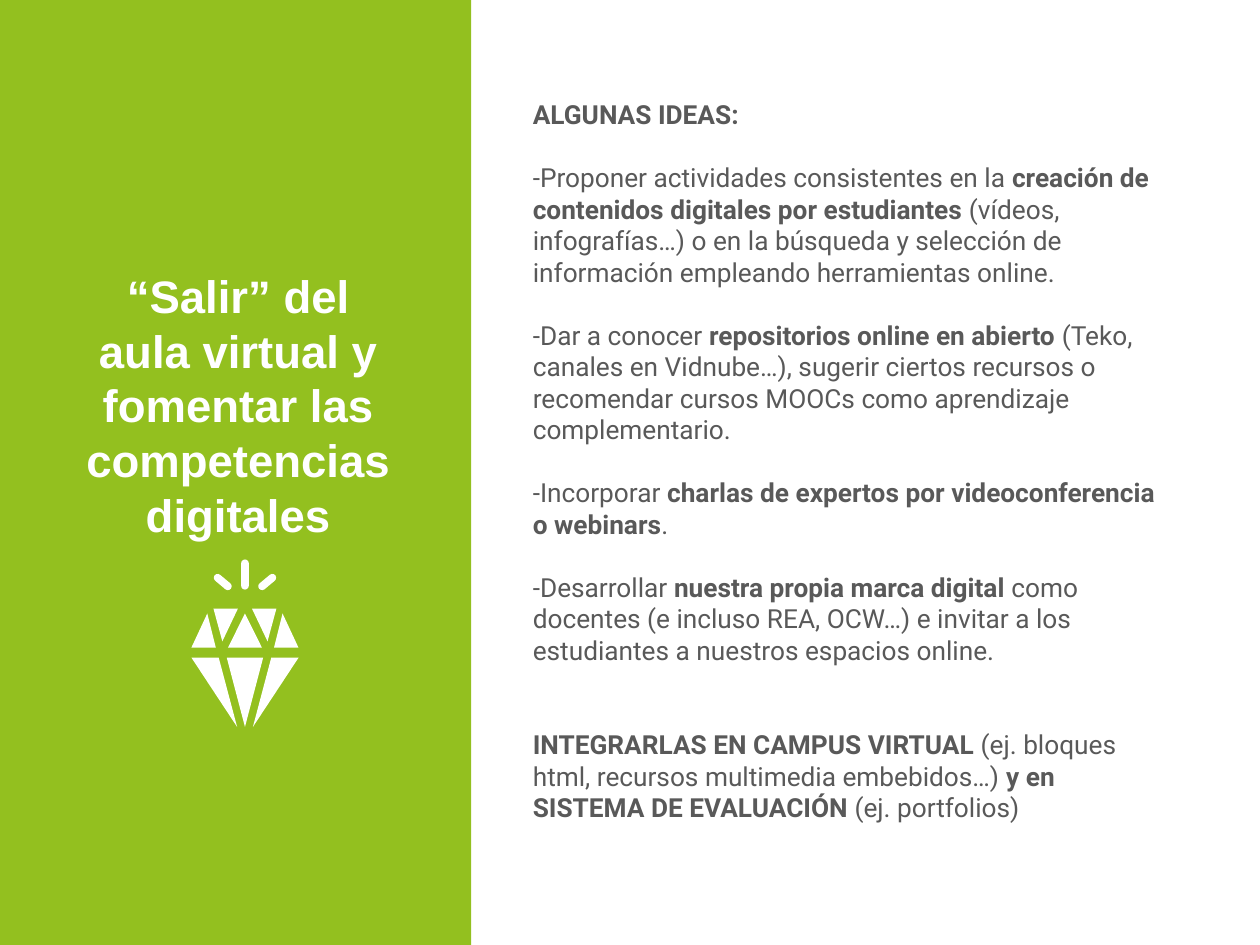
from dataclasses import dataclass

from pptx import Presentation
from pptx.dml.color import RGBColor
from pptx.enum.shapes import MSO_SHAPE as Shape
from pptx.enum.text import MSO_ANCHOR as Anchor, PP_ALIGN as Align
from pptx.util import Pt


@dataclass(frozen=True)
class Theme:
    green: RGBColor = RGBColor(0x93, 0xC0, 0x1F)
    white: RGBColor = RGBColor(0xFF, 0xFF, 0xFF)
    grey: RGBColor = RGBColor(0x59, 0x59, 0x59)
    title_font: str = "Arial"
    body_font: str = "Roboto"
    title_size: int = 26
    body_size: int = 15
    body_line: int = 18


THEME = Theme()

TITLE = "“Salir” del aula virtual y fomentar las competencias digitales"

# Each paragraph: blank lines before it, then (text, bold) runs.
IDEAS = [
    (0, [("ALGUNAS IDEAS:", True)]),
    (1, [("-Proponer actividades consistentes en la ", False),
         ("creación de contenidos digitales por estudiantes", True),
         (" (vídeos, infografías…) o en la búsqueda y selección de "
          "información empleando herramientas online.", False)]),
    (1, [("-Dar a conocer ", False),
         ("repositorios online en abierto ", True),
         ("(Teko, canales en Vidnube…), sugerir ciertos recursos o "
          "recomendar cursos MOOCs como aprendizaje complementario.", False)]),
    (1, [("-Incorporar ", False),
         ("charlas de expertos por videoconferencia o webinars", True),
         (".", False)]),
    (1, [("-Desarrollar ", False),
         ("nuestra propia marca digital", True),
         (" como docentes (e incluso REA, OCW…) e invitar a los "
          "estudiantes a nuestros espacios online.", False)]),
    (2, [("INTEGRARLAS EN CAMPUS VIRTUAL ", True),
         ("(ej. bloques html, recursos multimedia embebidos…) ", False),
         ("y en SISTEMA DE EVALUACIÓN ", True),
         ("(ej. portfolios)", False)]),
]

GEM_AXIS = 140
CROWN_TOP, CROWN_PEAK, CROWN_TIP, CROWN_BASE = 347.8, 350.6, 366.5, 370.1
GIRDLE, POINT = 375.8, 415.4

# Facets as offsets from the axis of the gem.
CENTRE_FACETS = [
    [(0, CROWN_PEAK), (-9.7, CROWN_BASE), (9.7, CROWN_BASE)],
    [(-10.4, GIRDLE), (0, POINT), (10.4, GIRDLE)],
]
SIDE_FACETS = [
    [(4, CROWN_TOP), (12.9, CROWN_TIP), (18, CROWN_TOP)],
    [(21.5, CROWN_PEAK), (16.6, CROWN_BASE), (30.6, CROWN_BASE)],
    [(15, GIRDLE), (4.5, POINT), (30.6, GIRDLE)],
]


def paint(shape, color):
    shape.shadow.inherit = False
    shape.fill.solid()
    shape.fill.fore_color.rgb = color
    shape.line.fill.background()


def add_text_frame(slide, left, top, width, height, margin_y):
    frame = slide.shapes.add_textbox(
        Pt(left), Pt(top), Pt(width), Pt(height)).text_frame
    frame.word_wrap = True
    frame.vertical_anchor = Anchor.TOP
    frame.margin_left = frame.margin_right = Pt(7.2)
    frame.margin_top = frame.margin_bottom = Pt(margin_y)
    return frame


def set_font(paragraph, name, size, color):
    font = paragraph.font
    font.name, font.size, font.color.rgb = name, Pt(size), color


def add_title(slide):
    frame = add_text_frame(slide, 41.8, 149.8, 188.6, 164.9, 3.6)
    title = frame.paragraphs[0]
    title.text = TITLE
    title.alignment = Align.CENTER
    set_font(title, THEME.title_font, THEME.title_size, THEME.white)
    title.font.bold = True


def add_ideas(slide):
    frame = add_text_frame(slide, 297.4, 49, 378.7, 447.8, 7.2)
    for index, (blank_lines, runs) in enumerate(IDEAS):
        idea = frame.add_paragraph() if index else frame.paragraphs[0]
        if blank_lines:
            idea.space_before = Pt(blank_lines * THEME.body_line)
        set_font(idea, THEME.body_font, THEME.body_size, THEME.grey)
        for text, bold in runs:
            run = idea.add_run()
            run.text, run.font.bold = text, bold


def add_facet(slide, corners, side=1):
    """Draw one facet; side=-1 mirrors it across the axis of the gem."""
    points = [(Pt(GEM_AXIS + side * x), Pt(y)) for x, y in corners]
    builder = slide.shapes.build_freeform(*points[0], scale=1.0)
    builder.add_line_segments(points[1:], close=True)
    paint(builder.convert_to_shape(), THEME.white)


def add_ray(slide, offset, middle, length, angle):
    width = 4.4
    ray = slide.shapes.add_shape(
        Shape.ROUNDED_RECTANGLE, Pt(GEM_AXIS + offset - width / 2),
        Pt(middle - length / 2), Pt(width), Pt(length))
    ray.adjustments[0] = 0.5
    ray.rotation = angle
    paint(ray, THEME.white)


def add_gem(slide):
    for corners in CENTRE_FACETS:
        add_facet(slide, corners)
    add_ray(slide, 0, 328.3, 17.2, 0)
    for side in (-1, 1):
        for corners in SIDE_FACETS:
            add_facet(slide, corners, side)
        add_ray(slide, side * 12.7, 332.6, 12, side * 50)


def main():
    deck = Presentation()
    deck.slide_width, deck.slide_height = Pt(720), Pt(540)
    slide = deck.slides.add_slide(deck.slide_layouts[6])
    panel = slide.shapes.add_shape(
        Shape.RECTANGLE, Pt(0), Pt(0), Pt(269.3), Pt(540))
    paint(panel, THEME.green)
    add_ideas(slide)
    add_title(slide)
    add_gem(slide)
    deck.save("out.pptx")


if __name__ == "__main__":
    main()
